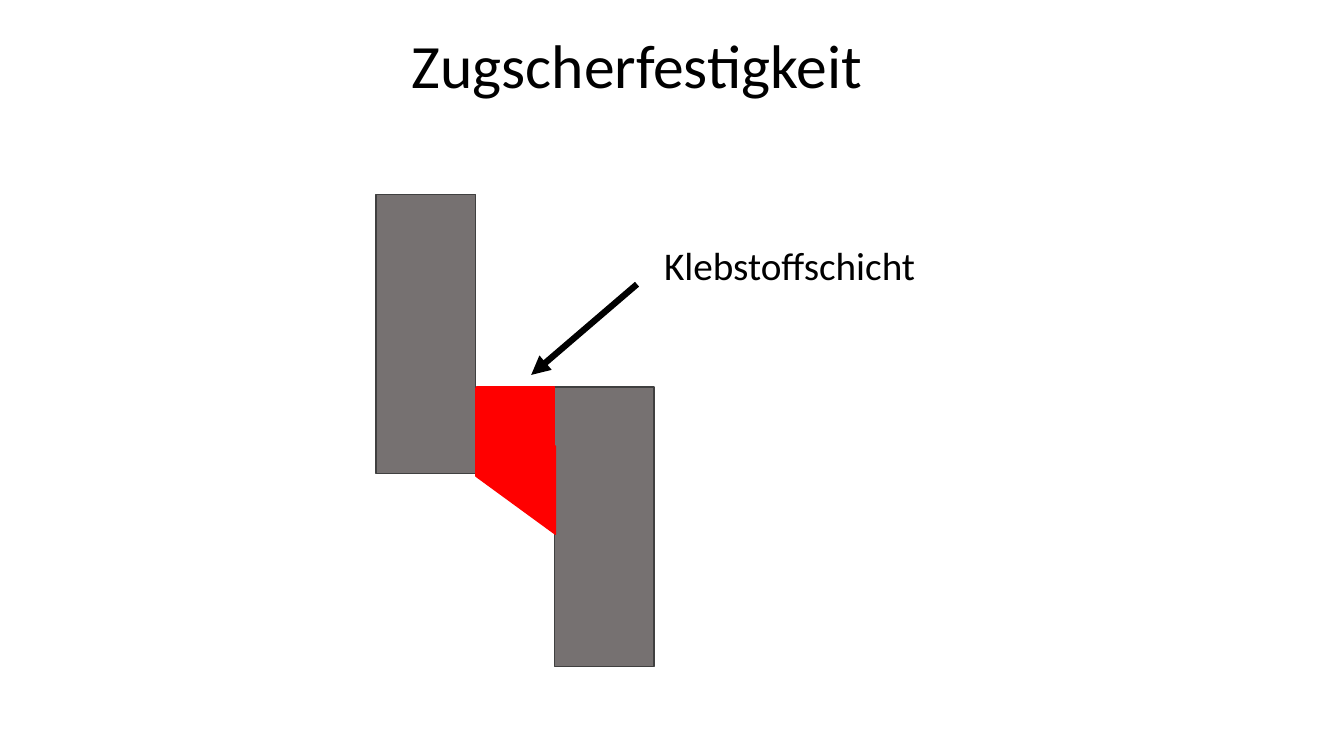
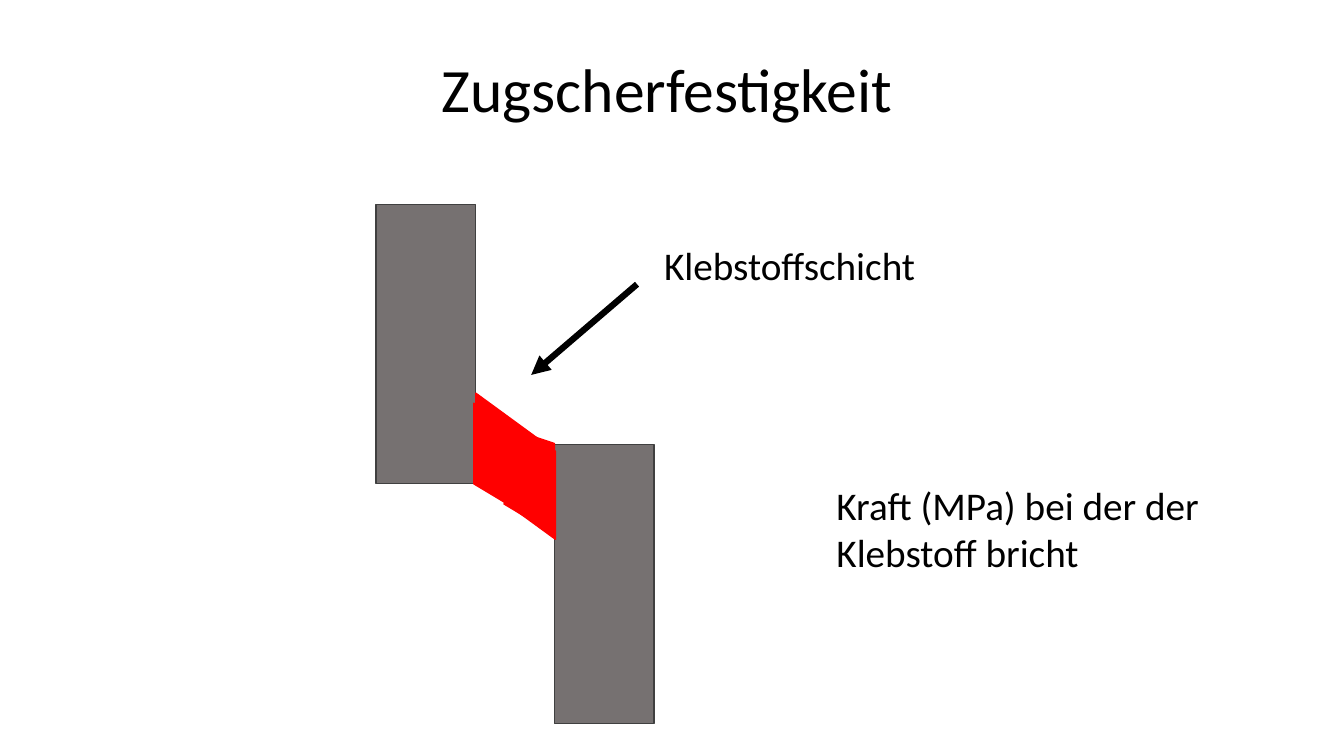
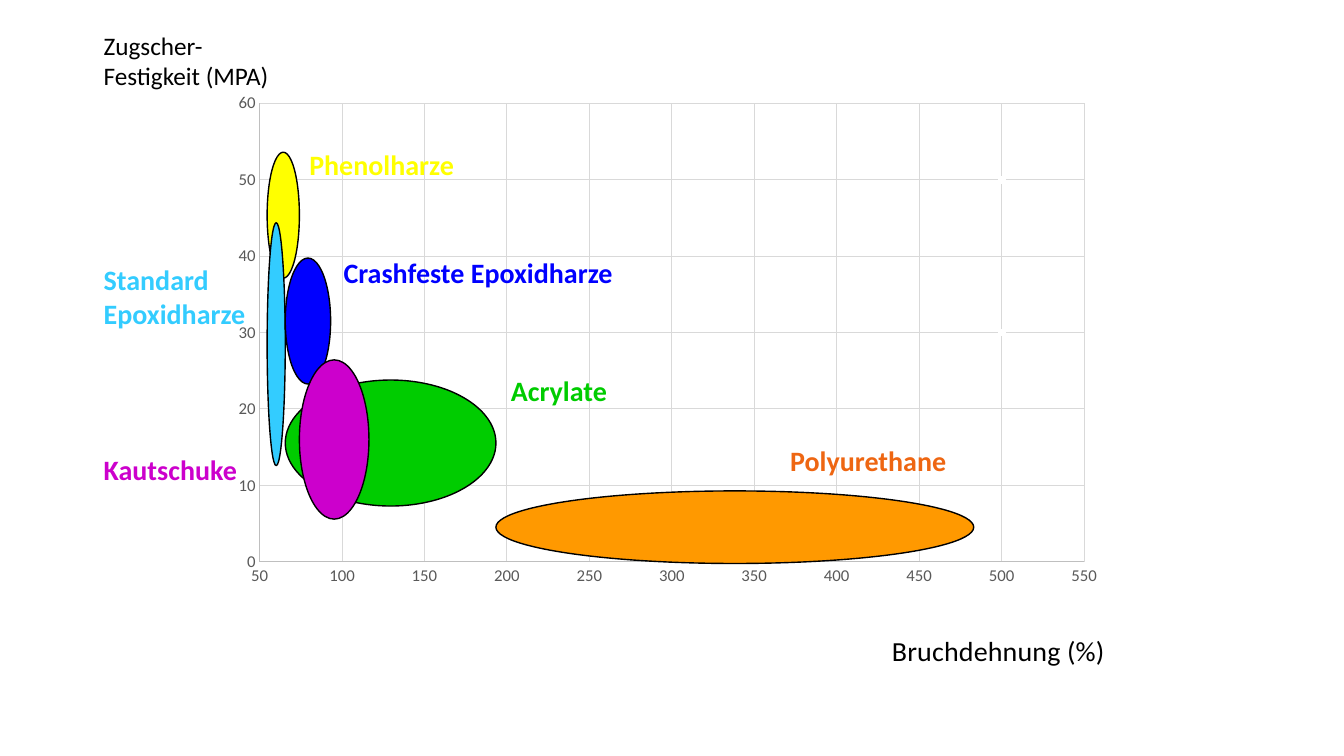
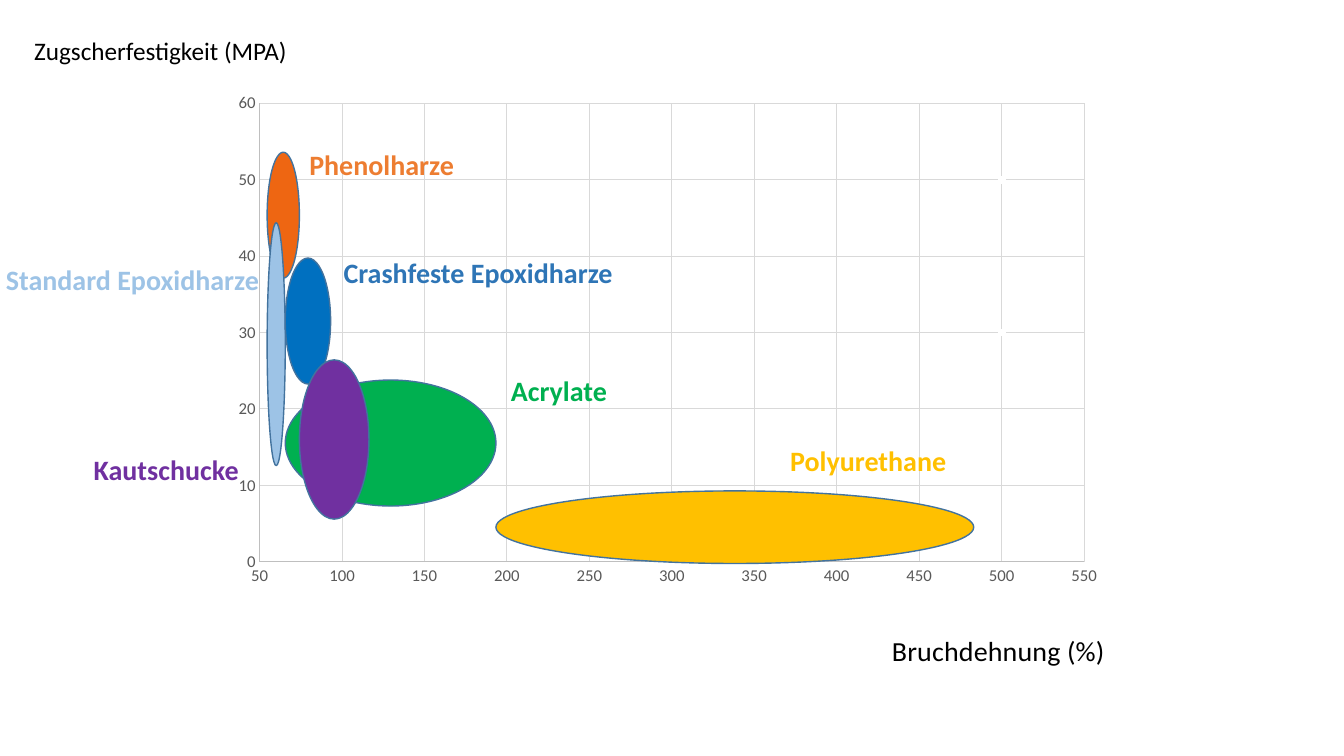
"""Builds four slides on the lap shear strength of adhesives."""
from dataclasses import dataclass

from pptx import Presentation
from pptx.chart.data import XyChartData
from pptx.dml.color import RGBColor
from pptx.enum.chart import XL_CHART_TYPE, XL_MARKER_STYLE, XL_TICK_MARK
from pptx.enum.shapes import MSO_CONNECTOR, MSO_SHAPE
from pptx.enum.text import MSO_ANCHOR, MSO_AUTO_SIZE, PP_ALIGN
from pptx.oxml.ns import qn
from pptx.util import Inches, Pt

RECT, OVAL, SLANT = MSO_SHAPE.RECTANGLE, MSO_SHAPE.OVAL, MSO_SHAPE.PARALLELOGRAM
STRAIGHT = MSO_CONNECTOR.STRAIGHT
SCATTER, CIRCLE = XL_CHART_TYPE.XY_SCATTER, XL_MARKER_STYLE.CIRCLE
NO_TICK = XL_TICK_MARK.NONE
MIDDLE, CENTER = MSO_ANCHOR.MIDDLE, PP_ALIGN.CENTER
GROW = MSO_AUTO_SIZE.SHAPE_TO_FIT_TEXT
TITLE_ONLY, BLANK = 5, 6

CELL = Inches(0.1)
COLS, ROWS = 133.33, 75


@dataclass(frozen=True)
class Theme:
    """Fonts, colours and type sizes of the deck."""
    font: str = "Calibri"
    ink: str = "000000"
    plate: str = "767171"
    plate_edge: str = "404040"
    glue: str = "FF0000"
    oval_edge: str = "43739E"
    tick: str = "595959"
    axis: str = "BFBFBF"
    grid: str = "D9D9D9"
    title: int = 44
    note: int = 28
    label: int = 20
    caption: int = 18
    scale: int = 12


THEME = Theme()

PLATE_SIZE = (9.9, 27.7)
ARROW = ((63.2, 28.2), (52.7, 37.2))
LOWER_TEAR = [(54.9, 44.2), (55, 53.1), (49.8, 49.7), (51, 49.2), (50, 48.4),
              (51.5, 48.1), (50.5, 46.7), (52.1, 46.3), (51.1, 45), (52.2, 45),
              (51.1, 43.5), (51.4, 42.6), (52.1, 42.8)]
UPPER_TEAR = [(47.3, 39.6), (47.3, 48.1), (52, 51.3), (51.3, 49.7), (52.1, 49.5),
              (51.3, 47.8), (52.5, 47.5), (51.4, 46.4), (51.7, 45.1),
              (51.3, 43.4), (52.7, 43.7)]

OVALS = {
    "phenolic": (26.5, 15.1, 3.2, 12.5),
    "epoxy": (26.5, 22.1, 1.8, 24.1),
    "crash": (28.3, 25.6, 4.5, 12.5),
    "acrylate": (28.3, 37.7, 20.9, 12.5),
    "rubber": (29.7, 35.7, 6.9, 15.8),
    "urethane": (49.2, 48.7, 47.4, 7.2),
}
LABELS = {
    "phenolic": ("Phenolharze", (29.7, 14.1, 16.5, 4.4)),
    "crash": ("Crashfeste Epoxidharze", (33.1, 24.9, 29, 4.4)),
    "urethane": ("Polyurethane", (77.4, 43.5, 17.6, 4.4)),
    "acrylate": ("Acrylate", (49.7, 36.6, 11.6, 4.4)),
}
BRIGHT = {
    "caption": ("Zugscher-\nFestigkeit (MPA)", (9.3, 2.5, 18.6, 7.1)),
    "edge": THEME.ink,
    "fills": {"phenolic": "FFFF00", "epoxy": "33CCFF", "crash": "0000FF",
              "acrylate": "00CC00", "rubber": "CC00CC", "urethane": "FF9900"},
    "inks": {"urethane": "EE6612"},
    "labels": {"epoxy": ("Standard\nEpoxidharze", (9.3, 25.6, 16.8, 7.7)),
               "rubber": ("Kautschuke", (9.3, 44.4, 15.4, 4.4))},
}
MUTED = {
    "caption": ("Zugscherfestigkeit (MPA)", (2.4, 3, 27.4, 4)),
    "edge": THEME.oval_edge,
    "fills": {"phenolic": "EE6612", "epoxy": "9DC3E6", "crash": "0070C0",
              "acrylate": "00B050", "rubber": "7030A0", "urethane": "FFC000"},
    "inks": {"phenolic": "ED7D31", "crash": "2E75B6"},
    "labels": {"epoxy": ("Standard Epoxidharze", (-0.4, 25.6, 27.4, 4.4)),
               "rubber": ("Kautschucke", (8.3, 44.4, 16.6, 4.4))},
}


def cells(*values):
    """Turn grid cells into slide lengths."""
    return [round(v * CELL) for v in values]


def assign(obj, **values):
    """Set each named attribute on the object."""
    for name, value in values.items():
        setattr(obj, name, value)


def style_font(font, size, color=THEME.ink, bold=False):
    """Give a font the deck's face, a size and a colour."""
    assign(font, name=THEME.font, size=Pt(size), bold=bold)
    font.color.rgb = RGBColor.from_string(color)


def style_line(line, color, width):
    """Give a line its colour and width in points."""
    line.color.rgb = RGBColor.from_string(color)
    line.width = Pt(width)


def place(node, **shares):
    """Fix a chart part's layout as shares of the chart."""
    layout = node.find(qn("c:layout"))
    if layout is None:
        layout = node.makeelement(qn("c:layout"), {})
        node.insert(0 if node.find(qn("c:tx")) is None else 1, layout)
    manual = layout.makeelement(qn("c:manualLayout"), {})
    layout.append(manual)
    modes = {"xMode": "edge", "yMode": "edge"}
    if "w" in shares:
        modes = {"layoutTarget": "inner", **modes}
    for tag, value in {**modes, **shares}.items():
        manual.append(manual.makeelement(qn(f"c:{tag}"), {"val": str(value)}))


class Deck:
    """The presentation, its style and the current slide."""

    def __init__(self):
        """Open an empty deck of the grid's size."""
        self.prs = Presentation()
        self.prs.slide_width, self.prs.slide_height = cells(COLS, ROWS)
        self.s = None

    def slide(self, layout=BLANK):
        """Start a new slide."""
        self.s = self.prs.slides.add_slide(self.prs.slide_layouts[layout])

    def title(self, text, left, top):
        """Fill and move the title placeholder."""
        sp = self.s.shapes.title
        box = cells(left, top, 115, 14.5)
        assign(sp, **dict(zip(("left", "top", "width", "height"), box)))
        assign(sp.text_frame, text=text, vertical_anchor=MIDDLE)
        p = sp.text_frame.paragraphs[0]
        assign(p, alignment=CENTER, line_spacing=0.9)
        style_font(p.runs[0].font, THEME.title)

    def text(self, text, box, size, color=THEME.ink, bold=False, wrap=False):
        """Add a text box."""
        tf = self.s.shapes.add_textbox(*cells(*box)).text_frame
        assign(tf, text=text, word_wrap=wrap, auto_size=GROW)
        for p in tf.paragraphs:
            style_font(p.runs[0].font, size, color, bold)

    def paint(self, sp, fill, edge):
        """Fill and outline a shape without a shadow."""
        sp.shadow.inherit = False
        sp.fill.solid()
        sp.fill.fore_color.rgb = RGBColor.from_string(fill)
        style_line(sp.line, edge, 1)

    def shape(self, kind, box, fill, edge):
        """Add a preset shape."""
        sp = self.s.shapes.add_shape(kind, *cells(*box))
        self.paint(sp, fill, edge)
        return sp

    def outline(self, points, color):
        """Add a closed polygon."""
        builder = self.s.shapes.build_freeform(*points[0], scale=CELL)
        builder.add_line_segments(points[1:], close=True)
        self.paint(builder.convert_to_shape(), color, color)

    def arrow(self, start, end):
        """Add a thick arrow."""
        sp = self.s.shapes.add_connector(STRAIGHT, *cells(*start, *end))
        style_line(sp.line, THEME.ink, 4.5)
        ln = sp.line._get_or_add_ln()
        ln.append(ln.makeelement(qn("a:tailEnd"), {"type": "triangle"}))
        props = ln.getparent()
        props.append(props.makeelement(qn("a:effectLst"), {}))

    def plates(self, upper_top, lower_top):
        """Add the two bonded plates."""
        for left, top in ((37.3, upper_top), (55, lower_top)):
            self.shape(RECT, (left, top, *PLATE_SIZE), THEME.plate, THEME.plate_edge)

    def sheared_glue(self, top):
        """Add the slanted adhesive layer."""
        sp = self.shape(SLANT, (43.9, top, 14.5, 7.9), THEME.glue, THEME.glue)
        sp.rotation = 270
        sp.adjustments[0] = 0.73

    def glue_note(self):
        """Label the adhesive layer and point at it."""
        self.text("Klebstoffschicht", (64.9, 23.4, 27.3, 5.7), THEME.note)
        self.arrow(*ARROW)

    def axis(self, axis, low, high, step):
        """Scale and style a chart axis."""
        assign(axis, minimum_scale=low, maximum_scale=high, major_unit=step,
               major_tick_mark=NO_TICK, minor_tick_mark=NO_TICK,
               has_major_gridlines=True)
        style_line(axis.format.line, THEME.axis, 0.75)
        style_line(axis.major_gridlines.format.line, THEME.grid, 0.75)
        style_font(axis.tick_labels.font, THEME.scale, THEME.tick)

    def chart(self):
        """Add the strength and elongation axes with unpainted points."""
        data = XyChartData()
        series = data.add_series("Series 1")
        for x, y in ((100, 10), (500, 30), (500, 50)):
            series.add_data_point(x, y)
        box = cells(22.2, 7.9, 88.9, 59.3)
        chart = self.s.shapes.add_chart(SCATTER, *box, data).chart
        assign(chart, has_title=False, has_legend=False)
        style_font(chart.font, 10)
        plot = chart.plots[0]
        plot.vary_by_categories = False
        points = plot.series[0]
        points.format.line.fill.background()
        assign(points.marker, style=CIRCLE, size=5)
        points.marker.format.fill.background()
        points.marker.format.line.fill.background()
        self.axis(chart.category_axis, 50, 550, 50)
        self.axis(chart.value_axis, 0, 60, 10)
        tf = chart.category_axis.axis_title.text_frame
        tf.text = "Bruchdehnung (%)"
        style_font(tf.paragraphs[0].runs[0].font, THEME.label)
        area = chart.element.find(".//" + qn("c:plotArea"))
        place(area, x=0.04, y=0.04, w=0.92, h=0.78)
        place(area.find(".//" + qn("c:title")), x=0.74, y=0.93)

    def materials(self, look):
        """Add a slide that maps the adhesive families."""
        self.slide()
        self.chart()
        self.text(*look["caption"], THEME.caption)
        for name, box in OVALS.items():
            self.shape(OVAL, box, look["fills"][name], look["edge"])
        inks = {**look["fills"], **look["inks"]}
        for name, (text, box) in {**LABELS, **look["labels"]}.items():
            self.text(text, box, THEME.label, inks[name], bold=True)


def main():
    """Build and save the deck."""
    deck = Deck()

    deck.slide(TITLE_ONLY)
    deck.title("Zugscherfestigkeit", 5.7, -0.4)
    deck.plates(19.3, 38.4)
    deck.shape(RECT, (47.3, 38.4, 7.7, 8.6), THEME.glue, THEME.glue)
    deck.glue_note()
    deck.sheared_glue(41.8)

    deck.slide(TITLE_ONLY)
    deck.title("Zugscherfestigkeit", 8.7, 1.9)
    deck.plates(20.3, 44.1)
    deck.glue_note()
    deck.sheared_glue(42.3)
    for tear in (LOWER_TEAR, UPPER_TEAR):
        deck.outline(tear, THEME.glue)
    deck.text("Kraft (MPa) bei der der Klebstoff bricht", (82, 47.3, 41.7, 10.4),
              THEME.note, wrap=True)

    for look in (BRIGHT, MUTED):
        deck.materials(look)

    deck.prs.save("out.pptx")


if __name__ == "__main__":
    main()
